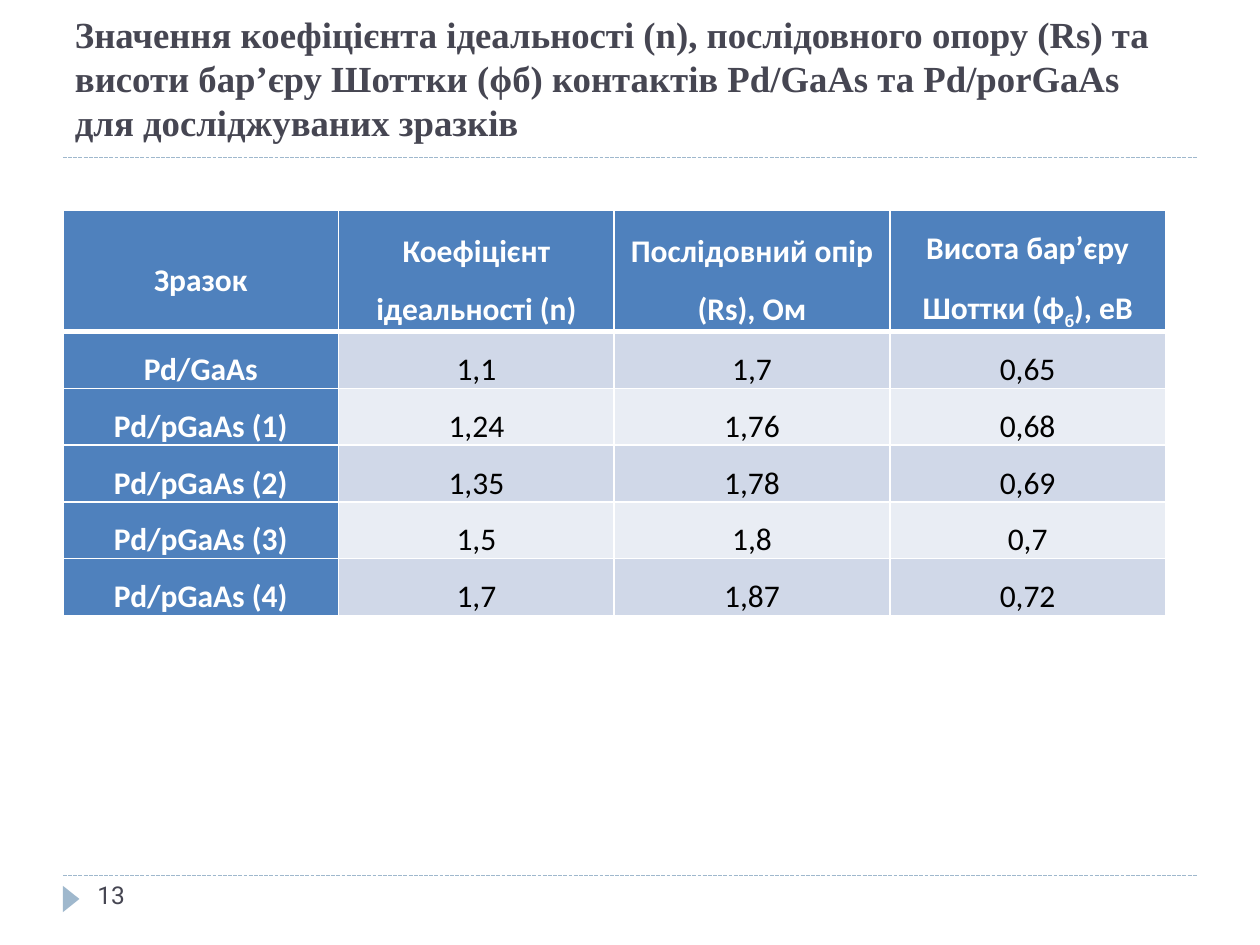
from dataclasses import dataclass
from lxml import etree
from pptx import Presentation
from pptx import util as u
from pptx.dml.color import RGBColor
from pptx.enum import dml, text
from pptx.oxml.ns import qn
from pptx.slide import Slide

SLATE = RGBColor(0x46, 0x46, 0x52)
MIST = RGBColor(0x9F, 0xB8, 0xCD)
BLUE = RGBColor(0x4F, 0x81, 0xBD)
BANDS = (RGBColor(0xD0, 0xD8, 0xE8), RGBColor(0xE9, 0xED, 0xF4))
WHITE = RGBColor(0xFF, 0xFF, 0xFF)
BLACK = RGBColor(0, 0, 0)

TITLE = ("Значення коефіцієнта ідеальності (n), послідовного опору (Rs) та "
         "висоти бар’єру Шоттки (ϕб) контактів Pd/GaAs та Pd/porGaAs "
         "для досліджуваних зразків")
# A tuple holds normal, subscript and normal text
ROWS = [
    ["Зразок", "Коефіцієнт ідеальності (n)", "Послідовний опір (Rs), Ом",
     ("Висота бар’єру Шоттки (ϕ", "б", "), еВ")],
    ["Pd/GaAs", "1,1", "1,7", "0,65"],
    ["Pd/pGaAs (1)", "1,24", "1,76", "0,68"],
    ["Pd/pGaAs (2)", "1,35", "1,78", "0,69"],
    ["Pd/pGaAs (3)", "1,5", "1,8", "0,7"],
    ["Pd/pGaAs (4)", "1,7", "1,87", "0,72"],
]


@dataclass
class SlideBuilder:
    page: Slide
    title_font: str = "Times New Roman"
    table_font: str = "Calibri"
    number_font: str = "Roboto"

    def set_font(self, para, name, size, color, bold=False):
        font = para.font
        font.name, font.size, font.bold = name, u.Pt(size), bold
        font.color.rgb = color

    def set_margins(self, target, side=0, top=0):
        target.margin_left = target.margin_right = u.Pt(side)
        target.margin_top, target.margin_bottom = u.Pt(top), 0

    def place(self, shape, left, top, width, height):
        shape.left, shape.top = u.Pt(left), u.Pt(top)
        shape.width, shape.height = u.Pt(width), u.Pt(height)

    def title(self, wording, *bounds):
        box = self.page.shapes.title
        self.place(box, *bounds)
        frame = box.text_frame
        frame.text = wording
        frame.word_wrap = True
        frame.auto_size = text.MSO_AUTO_SIZE.NONE
        frame.vertical_anchor = text.MSO_ANCHOR.TOP
        self.set_margins(frame, top=1)
        para = frame.paragraphs[0]
        para.alignment = text.PP_ALIGN.LEFT
        para.space_before = u.Pt(1)
        self.set_font(para, self.title_font, 21, SLATE, True)

    def rule(self, left, right, top):
        line = self.page.shapes.add_connector(
            1, u.Pt(left), u.Pt(top), u.Pt(right), u.Pt(top))
        line.line.color.rgb = MIST
        line.line.width = u.Pt(0.75)
        line.line.dash_style = dml.MSO_LINE.SQUARE_DOT
        etree.SubElement(line._element.spPr, qn("a:effectLst"))

    def marker(self, left, top, width, height):
        outline = self.page.shapes.build_freeform(u.Pt(left), u.Pt(top))
        outline.add_line_segments([
            (u.Pt(left), u.Pt(top + height)),
            (u.Pt(left + width), u.Pt(top + height / 2))])
        shape = outline.convert_to_shape()
        shape.shadow.inherit = False
        shape.fill.solid()
        shape.fill.fore_color.rgb = MIST
        shape.line.fill.background()

    def page_number(self, number, *bounds):
        box = self.page.shapes.add_textbox(*(u.Pt(length) for length in bounds))
        frame = box.text_frame
        frame.word_wrap = True
        self.set_margins(frame)
        frame.margin_left = u.Pt(3)
        para = frame.paragraphs[0]
        para.text = number
        para.line_spacing = u.Pt(14.3)
        self.set_font(para, self.number_font, 14, SLATE)

    def border(self, cell, side, width):
        edge = etree.SubElement(cell._tc.get_or_add_tcPr(), qn(f"a:ln{side}"),
                                w=str(u.Pt(width)))
        fill = etree.SubElement(edge, qn("a:solidFill"))
        etree.SubElement(fill, qn("a:srgbClr"), val=str(WHITE))

    def cell(self, cell, content, row, column):
        heading = row == 0 or column == 0
        # Borders come before the fill in the cell properties
        for side in "LRTB":
            thick = (row, side) in ((0, "B"), (1, "T"))
            self.border(cell, side, 3 if thick else 1)
        cell.fill.solid()
        cell.fill.fore_color.rgb = BLUE if heading else BANDS[(row - 1) % 2]
        cell.vertical_anchor = text.MSO_ANCHOR.MIDDLE
        self.set_margins(cell, side=3.6)
        para = cell.text_frame.paragraphs[0]
        para.alignment = text.PP_ALIGN.CENTER
        para.line_spacing = 1.5
        self.set_font(para, self.table_font, 18,
                      WHITE if heading else BLACK, heading)
        parts = content if isinstance(content, tuple) else (content,)
        for index, part in enumerate(parts):
            span = para.add_run()
            span.text = part
            if index == 1:
                span.font._element.set("baseline", "-25000")

    def table(self, rows, left, top, width, height):
        frame = self.page.shapes.add_table(
            len(rows), len(rows[0]), u.Pt(left), u.Pt(top), u.Pt(width), u.Pt(height))
        grid = frame.table
        for row, contents in enumerate(rows):
            # Rows grow to fit their text
            grid.rows[row].height = u.Pt(15 if row else 30)
            for column, content in enumerate(contents):
                self.cell(grid.cell(row, column), content, row, column)
        frame.height = u.Pt(height)


def main():
    deck = Presentation()
    deck.slide_width, deck.slide_height = u.Pt(720), u.Pt(540)
    builder = SlideBuilder(deck.slides.add_slide(deck.slide_layouts[5]))

    # Frame lines and page marker
    for top in (500.4, 90):
        builder.rule(36, 684, top)
    builder.marker(36, 506.2, 9.4, 15)

    # Title, page number and table
    builder.title(TITLE, 42.8, 5.8, 618, 77)
    builder.page_number("13", 52.6, 505.4, 20, 16)
    builder.table(ROWS, 36, 120.2, 630, 227)

    deck.save("out.pptx")


if __name__ == "__main__":
    main()
